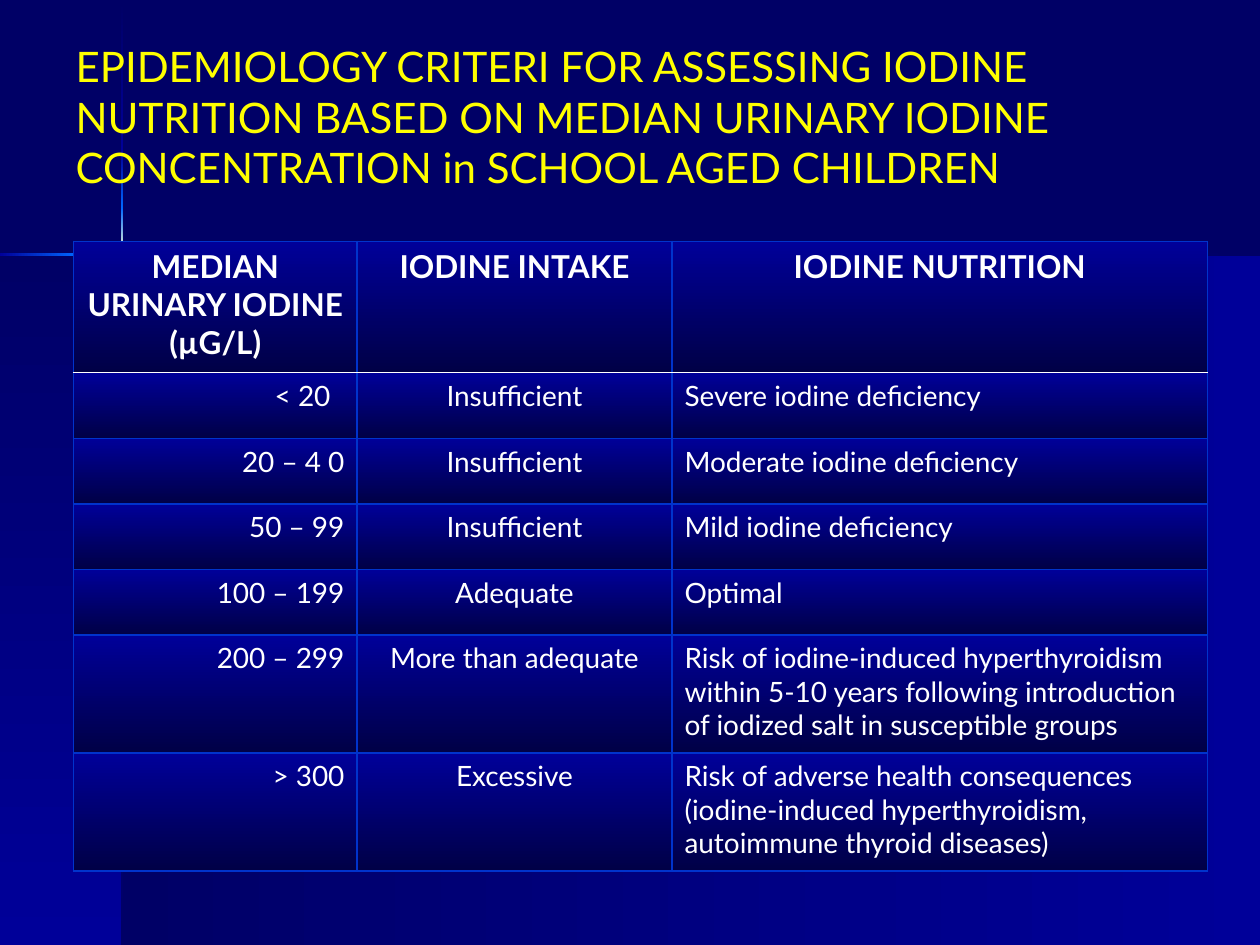
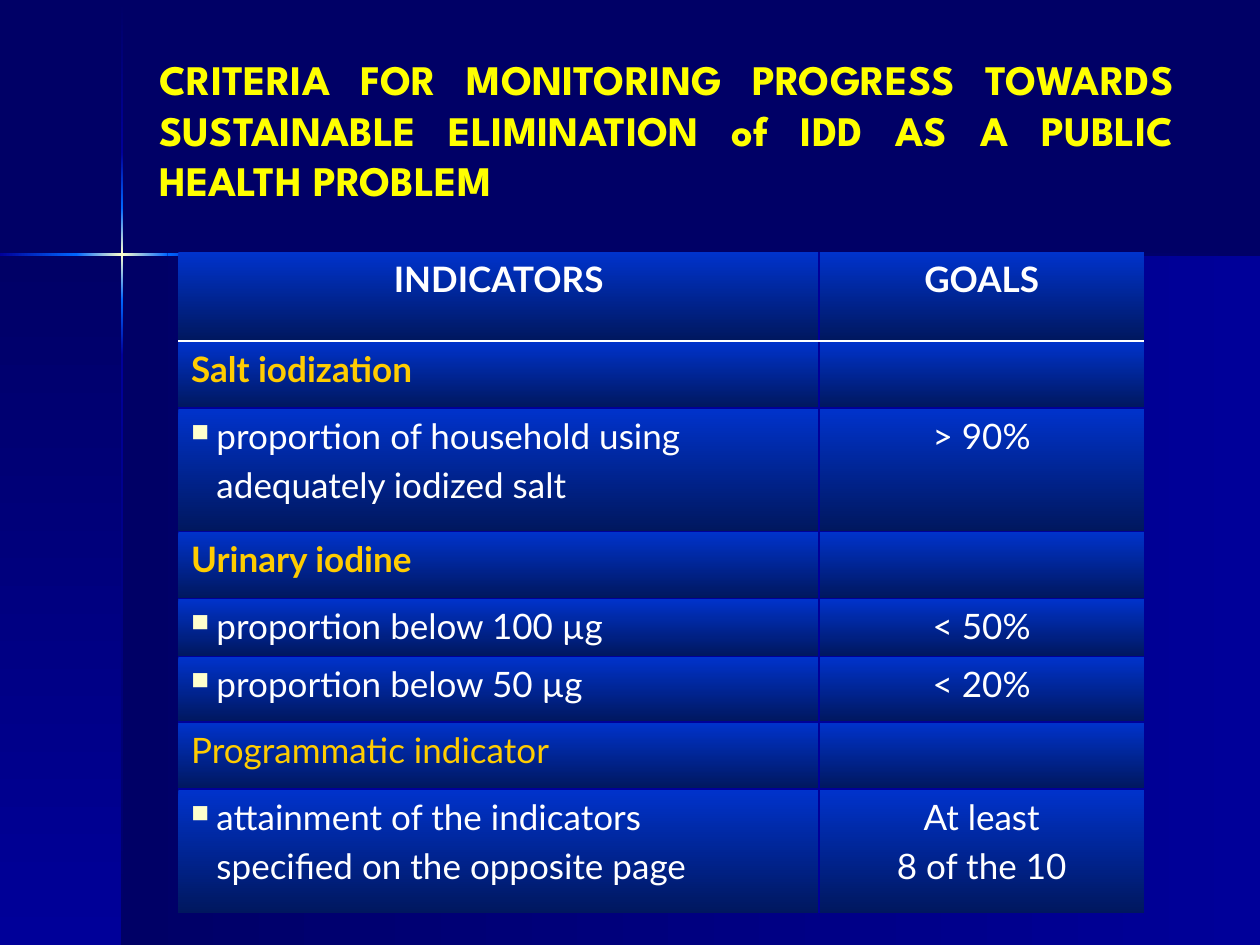
from copy import deepcopy
from itertools import pairwise

from lxml.etree import SubElement
from pptx import Presentation
from pptx.dml.color import RGBColor
from pptx.enum.shapes import MSO_SHAPE
from pptx.enum.text import MSO_ANCHOR, MSO_AUTO_SIZE, PP_ALIGN
from pptx.oxml.ns import qn
from pptx.util import Pt

NAVY, BLUE, BRIGHT, GLOW = "000066", "000099", "0066FF", "FFFFCC"
ROYAL, WHITE, YELLOW, GOLD = "0033CC", "FFFFFF", "FFFF00", "FFCC00"
BODY_FONT = "Lato"
LEFT, CENTER, RIGHT = PP_ALIGN.LEFT, PP_ALIGN.CENTER, PP_ALIGN.RIGHT
DOWN, ACROSS = 270, 0
HANGING = 14.5
TRAILING_GAP = 8

PANELS = [
    ((70, 145.5, 650, 394.5), (NAVY, BLUE), ACROSS),
    ((0, 145.5, 70, 394.5), (NAVY, BLUE), DOWN),
]
BEAM = [(NAVY, BLUE), (BLUE, BRIGHT), (BRIGHT, GLOW, BRIGHT), (BRIGHT, BLUE), (BLUE, NAVY)]
BEAM_X, BEAM_Y, BEAM_WIDTH = 69.1, 144.7, 1.4
BEAM_ROWS = [0.7, 87.1, 118.8, 171.4, 203, 540]
BEAM_COLUMNS = [0, 43.6, 95.8, 127.4, 720]

INTAKE = {
    "title": "EPIDEMIOLOGY CRITERI FOR ASSESSING IODINE NUTRITION BASED ON MEDIAN "
             "URINARY IODINE CONCENTRATION in SCHOOL AGED CHILDREN",
    "title_box": (36, 12, 648, 109),
    "title_font": (BODY_FONT, False),
    "title_align": LEFT,
    "corner": (42, 138),
    "columns": [162, 180, 306],
    "heights": [75, 37.5, 37.5, 37.5, 37.5, 67.5, 67.5],
    "aligns": [RIGHT, CENTER, LEFT],
    "sizes": (18, 16),
    "fill": BLUE,
    "inner": ROYAL,
    "outer": ROYAL,
    "rows": [
        ("MEDIAN URINARY IODINE (µG/L)", "IODINE INTAKE", "IODINE NUTRITION"),
        ("< 20", "Insufficient", "Severe iodine deficiency"),
        ("20 – 4 0", "Insufficient", "Moderate iodine deficiency"),
        ("50 – 99", "Insufficient", "Mild iodine deficiency"),
        ("100 – 199", "Adequate", "Optimal"),
        ("200 – 299", "More than adequate",
         "Risk of iodine-induced hyperthyroidism within 5-10 years following "
         "introduction of iodized salt in susceptible groups"),
        ("> 300", "Excessive",
         "Risk of adverse health consequences (iodine-induced hyperthyroidism, "
         "autoimmune thyroid diseases)"),
    ],
}

MONITORING = {
    "title": "CRITERIA FOR MONITORING PROGRESS TOWARDS SUSTAINABLE ELIMINATION of IDD "
             "AS A PUBLIC HEALTH PROBLEM",
    "title_box": (84, 24, 594, 100),
    "title_font": ("League Spartan", True),
    "title_align": PP_ALIGN.JUSTIFY,
    "corner": (102, 144),
    "columns": [366, 186],
    "heights": [51, 38.25, 70.5, 38.25, 33.25, 37.5, 38.25, 71],
    "aligns": [LEFT, CENTER],
    "sizes": (20, 20),
    "fill": ROYAL,
    "inner": BLUE,
    "outer": None,
    "rows": [
        ("INDICATORS", "GOALS"),
        ("Salt iodization", ""),
        ("proportion of household using\nadequately iodized salt", "> 90%"),
        ("Urinary iodine", ""),
        ("proportion below 100 µg", "< 50%"),
        ("proportion below 50 µg", "< 20%"),
        ("Programmatic indicator", ""),
        ("attainment of the indicators\nspecified on the opposite page",
         "At least\n8 of the 10"),
    ],
    "headings": {"Salt iodization": True, "Urinary iodine": True,
                 "Programmatic indicator": False},
}


def rgb(colour):
    return RGBColor.from_string(colour)


def paint(fill, owner, colours, angle):
    fill.gradient()
    fill.gradient_angle = angle
    stops = next(owner.iter(qn("a:gsLst")))
    while len(stops) < len(colours):
        stops.append(deepcopy(stops[0]))
    for index, (stop, colour) in enumerate(zip(fill.gradient_stops, colours)):
        stop.color.rgb = rgb(colour)
        stop.position = index / (len(colours) - 1)


def format_font(font, name, size, colour, bold):
    font.name, font.size, font.bold = name, Pt(size), bold
    font.color.rgb = rgb(colour)


def add_backdrop(slide, layout):
    layout.background.fill.solid()
    layout.background.fill.fore_color.rgb = rgb(NAVY)
    bands = list(PANELS)
    for (top, bottom), colours in zip(pairwise(BEAM_ROWS), BEAM):
        bands.append(((BEAM_X, top, BEAM_WIDTH, bottom - top), colours, DOWN))
    for (left, right), colours in zip(pairwise(BEAM_COLUMNS), BEAM[1:]):
        bands.append(((left, BEAM_Y, right - left, BEAM_WIDTH), colours, ACROSS))
    for index, (box, colours, angle) in enumerate(bands):
        band = slide.shapes.add_shape(MSO_SHAPE.RECTANGLE, *map(Pt, box))
        band.shadow.inherit = False
        band.line.fill.background()
        paint(band.fill, band.element, colours, angle)
        layout.element.cSld.spTree.insert(2 + index, band.element)


def add_title(slide, content):
    title = slide.shapes.title
    title.left, title.top, title.width, title.height = map(Pt, content["title_box"])
    frame = title.text_frame
    frame.text = content["title"]
    frame.auto_size = MSO_AUTO_SIZE.NONE
    frame.vertical_anchor = MSO_ANCHOR.MIDDLE
    paragraph = frame.paragraphs[0]
    paragraph.alignment = content["title_align"]
    name, bold = content["title_font"]
    format_font(paragraph.font, name, 24, YELLOW, bold)


def shade_cell(cell, colour):
    properties = cell._tc.get_or_add_tcPr()
    paint(cell.fill, properties, (colour, colour), DOWN)
    dark_end = list(properties.iter(qn("a:srgbClr")))[-1]
    SubElement(dark_end, qn("a:gamma"))
    SubElement(dark_end, qn("a:shade"), val="46275")
    SubElement(dark_end, qn("a:invGamma"))


def border_cell(cell, colours):
    properties = cell._tc.get_or_add_tcPr()
    for index, (side, colour) in enumerate(zip("LRTB", colours)):
        line = SubElement(properties, qn(f"a:ln{side}"), w=str(Pt(1)))
        if colour:
            solid = SubElement(line, qn("a:solidFill"))
            SubElement(solid, qn("a:srgbClr"), val=colour)
        else:
            SubElement(line, qn("a:noFill"))
        properties.insert(index, line)


def space_before(paragraph):
    paragraph.space_before = Pt(0)
    spacing = paragraph._p.pPr.find(qn("a:spcBef"))
    spacing.clear()
    SubElement(spacing, qn("a:spcPct"), val="20000")


def indent(paragraph, bulleted):
    properties = paragraph._p.get_or_add_pPr()
    properties.set("marL", str(Pt(HANGING)))
    properties.set("indent", str(-Pt(HANGING) if bulleted else 0))
    if bulleted:
        colour = SubElement(properties, qn("a:buClr"))
        SubElement(colour, qn("a:srgbClr"), val=GLOW)
        SubElement(properties, qn("a:buSzPct"), val="70000")
        SubElement(properties, qn("a:buChar"), char="■")


def write_cell(cell, text, content, is_header, column):
    headings = content.get("headings", {})
    is_item = bool(headings) and column == 0 and not is_header and text not in headings
    size = content["sizes"][0 if is_header else 1]
    colour = GOLD if text in headings else WHITE
    cell.text_frame.text = text
    for index, paragraph in enumerate(cell.text_frame.paragraphs):
        paragraph.alignment = CENTER if is_header else content["aligns"][column]
        space_before(paragraph)
        if is_item:
            indent(paragraph, index == 0)
        format_font(paragraph.font, BODY_FONT, size, colour,
                    is_header or headings.get(text, False))


def add_criteria(slide, content):
    rows, columns, heights = content["rows"], content["columns"], content["heights"]
    inner, outer = content["inner"], content["outer"]
    box = (*content["corner"], sum(columns), sum(heights))
    table = slide.shapes.add_table(len(rows), len(columns), *map(Pt, box)).table
    table.horz_banding = False
    for column, width in zip(table.columns, columns):
        column.width = Pt(width)
    for row, height in zip(table.rows, heights):
        row.height = Pt(height)
    row_lines = [outer, WHITE] + [inner] * (len(rows) - 2) + [outer]
    column_lines = [outer] + [inner] * (len(columns) - 1) + [outer]
    for r, texts in enumerate(rows):
        for c, text in enumerate(texts):
            cell = table.cell(r, c)
            write_cell(cell, text, content, r == 0, c)
            shade_cell(cell, content["fill"])
            border_cell(cell, column_lines[c:c + 2] + row_lines[r:r + 2])
    return table


def main():
    presentation = Presentation()
    presentation.slide_width, presentation.slide_height = Pt(720), Pt(540)
    layout = presentation.slide_layouts[5]
    intake_slide, monitoring_slide = [presentation.slides.add_slide(layout) for _ in range(2)]
    add_backdrop(intake_slide, layout)
    add_title(intake_slide, INTAKE)
    intake_table = add_criteria(intake_slide, INTAKE)
    intake_table.cell(1, 0).margin_right = Pt(7.2 + TRAILING_GAP)
    add_title(monitoring_slide, MONITORING)
    add_criteria(monitoring_slide, MONITORING)
    presentation.save("out.pptx")


if __name__ == "__main__":
    main()
